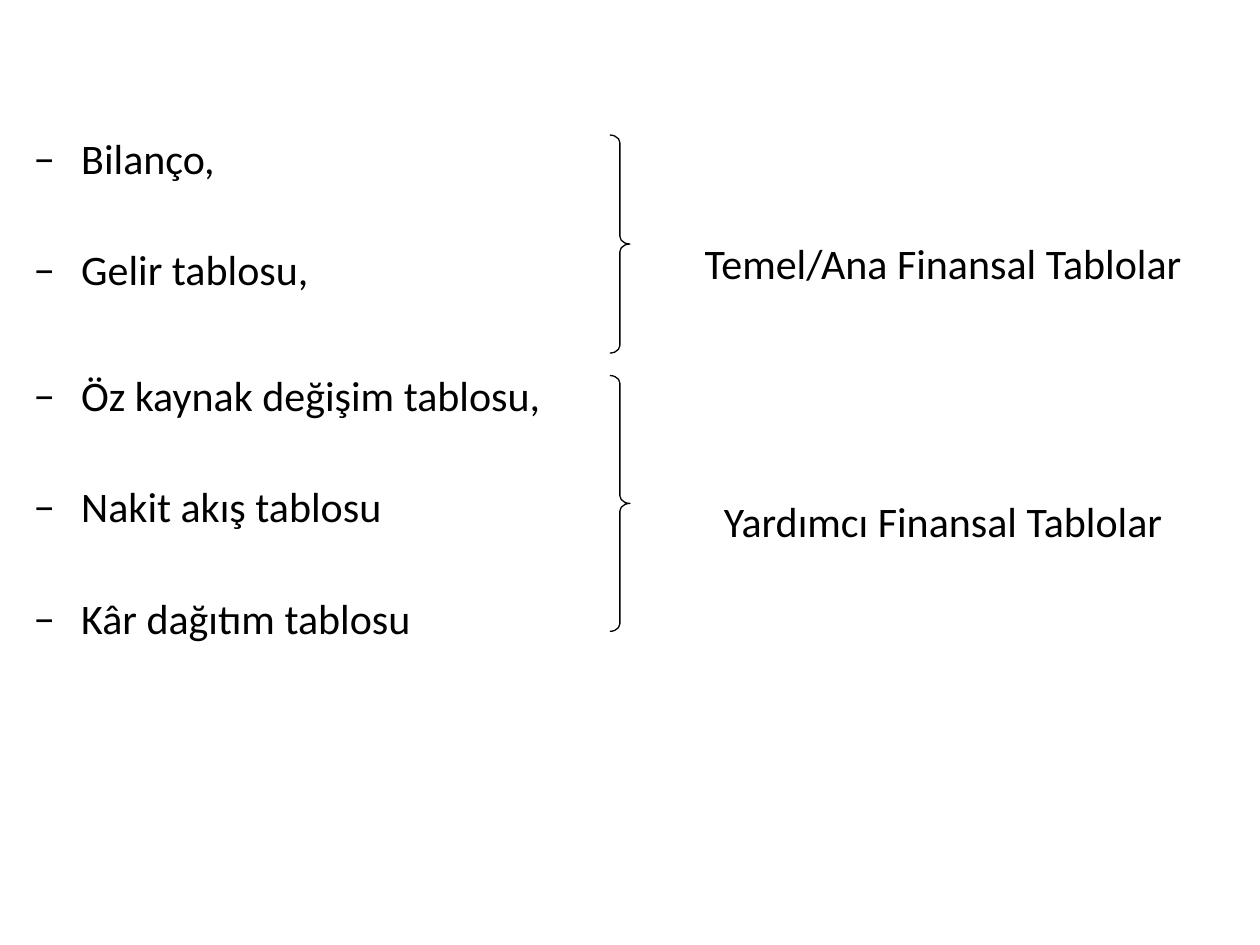
from dataclasses import dataclass

from lxml.etree import SubElement
from pptx import Presentation
from pptx.dml.color import RGBColor
from pptx.enum.shapes import MSO_SHAPE as Shape
from pptx.enum.text import PP_ALIGN as Align
from pptx.oxml.ns import qn
from pptx.util import Pt

BLACK = "000000"
FONT = "Calibri"
LINE_HEIGHT = 12
TABLE_LEFT, TABLE_TOP = 14.4, 94.3
COLUMN_WIDTH, ROW_HEIGHT = 343, 63.5
BRACE_LEFT, BRACE_WIDTH, BRACE_CURVE = 348.5, 11.5, 0.38

STATEMENTS = [
    "Bilanço,",
    "Gelir tablosu,",
    "Öz kaynak değişim tablosu,",
    "Nakit akış tablosu",
    "Kâr dağıtım tablosu",
]


@dataclass
class Group:
    """A label beside several statements, with the brace that joins them."""
    label: str
    first_row: int
    last_row: int
    lines_above: int
    brace_top: float
    brace_height: float


GROUPS = [
    Group("Temel/Ana Finansal Tablolar", 0, 1, 5, 77.2, 124.6),
    Group("Yardımcı Finansal Tablolar", 2, 4, 6, 214.6, 146.2),
]


def color(value: str) -> RGBColor:
    return RGBColor.from_string(value)


def clear_cell(cell) -> None:
    """Remove the borders and fill that the table style gives a cell."""
    properties = cell._tc.get_or_add_tcPr()
    for side in ("L", "R", "T", "B"):
        border = SubElement(properties, qn(f"a:ln{side}"), w="0")
        SubElement(border, qn("a:noFill"))
    cell.fill.background()


def write_cell(cell, text: str, *, align, margin: float = 0, indent: float = 0,
               bullet: str = "", top: float = 0) -> None:
    cell.margin_left = cell.margin_right = Pt(5)
    cell.margin_top, cell.margin_bottom = Pt(top), Pt(0)
    paragraph = cell.text_frame.paragraphs[0]
    paragraph.alignment = align
    paragraph.line_spacing = Pt(LINE_HEIGHT)
    properties = paragraph._p.get_or_add_pPr()
    properties.set("marL", str(Pt(margin)))
    properties.set("indent", str(Pt(indent)))
    if bullet:
        SubElement(properties, qn("a:buFont"), typeface=FONT)
        SubElement(properties, qn("a:buChar"), char=bullet)
    run = paragraph.add_run()
    run.text = text
    run.font.name = FONT
    run.font.size = Pt(24)
    run.font.color.rgb = color(BLACK)


def add_statement_table(slide) -> None:
    rows = len(STATEMENTS)
    table = slide.shapes.add_table(
        rows, 2, Pt(TABLE_LEFT), Pt(TABLE_TOP),
        Pt(2 * COLUMN_WIDTH), Pt(rows * ROW_HEIGHT)).table
    table.first_row = table.horz_banding = False
    for column in table.columns:
        column.width = Pt(COLUMN_WIDTH)
    for row in table.rows:
        row.height = Pt(ROW_HEIGHT)
    for cell in table.iter_cells():
        clear_cell(cell)
    for index, statement in enumerate(STATEMENTS):
        write_cell(table.cell(index, 0), statement, align=Align.JUSTIFY,
                   margin=27, indent=-27, bullet="−")
    for group in GROUPS:
        cell = table.cell(group.first_row, 1)
        cell.merge(table.cell(group.last_row, 1))
        write_cell(cell, group.label, align=Align.CENTER, indent=20,
                   top=group.lines_above * LINE_HEIGHT)


def add_brace(slide, group: Group) -> None:
    brace = slide.shapes.add_shape(
        Shape.RIGHT_BRACE, Pt(BRACE_LEFT), Pt(group.brace_top),
        Pt(BRACE_WIDTH), Pt(group.brace_height))
    brace.adjustments[0] = BRACE_CURVE
    brace.shadow.inherit = False
    brace.fill.background()
    brace.line.color.rgb = color(BLACK)
    brace.line.width = Pt(0.75)


def main() -> None:
    presentation = Presentation()
    presentation.slide_width, presentation.slide_height = Pt(720), Pt(540)
    slide = presentation.slides.add_slide(presentation.slide_layouts[6])
    add_statement_table(slide)
    for group in GROUPS:
        add_brace(slide, group)
    presentation.save("out.pptx")


if __name__ == "__main__":
    main()
